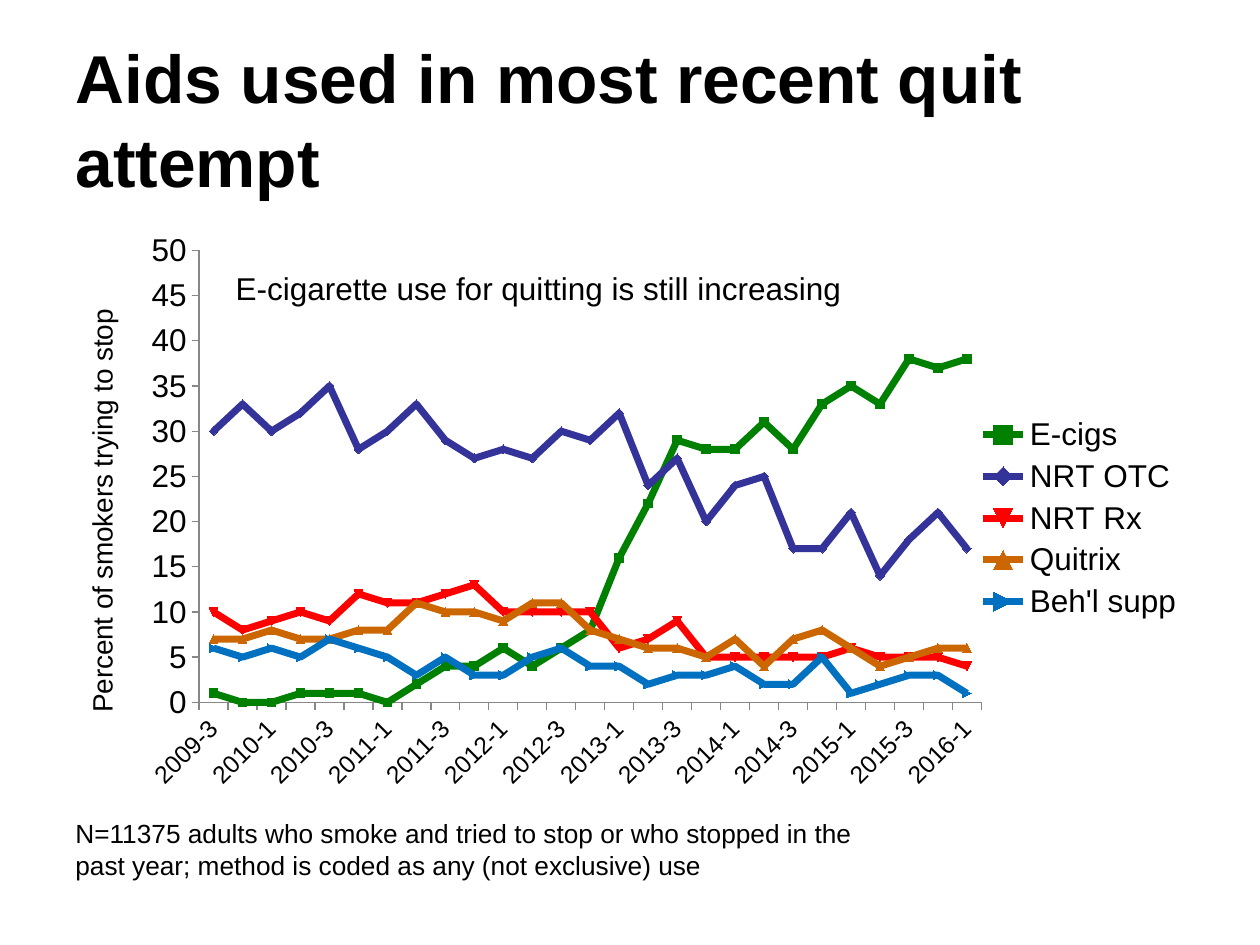
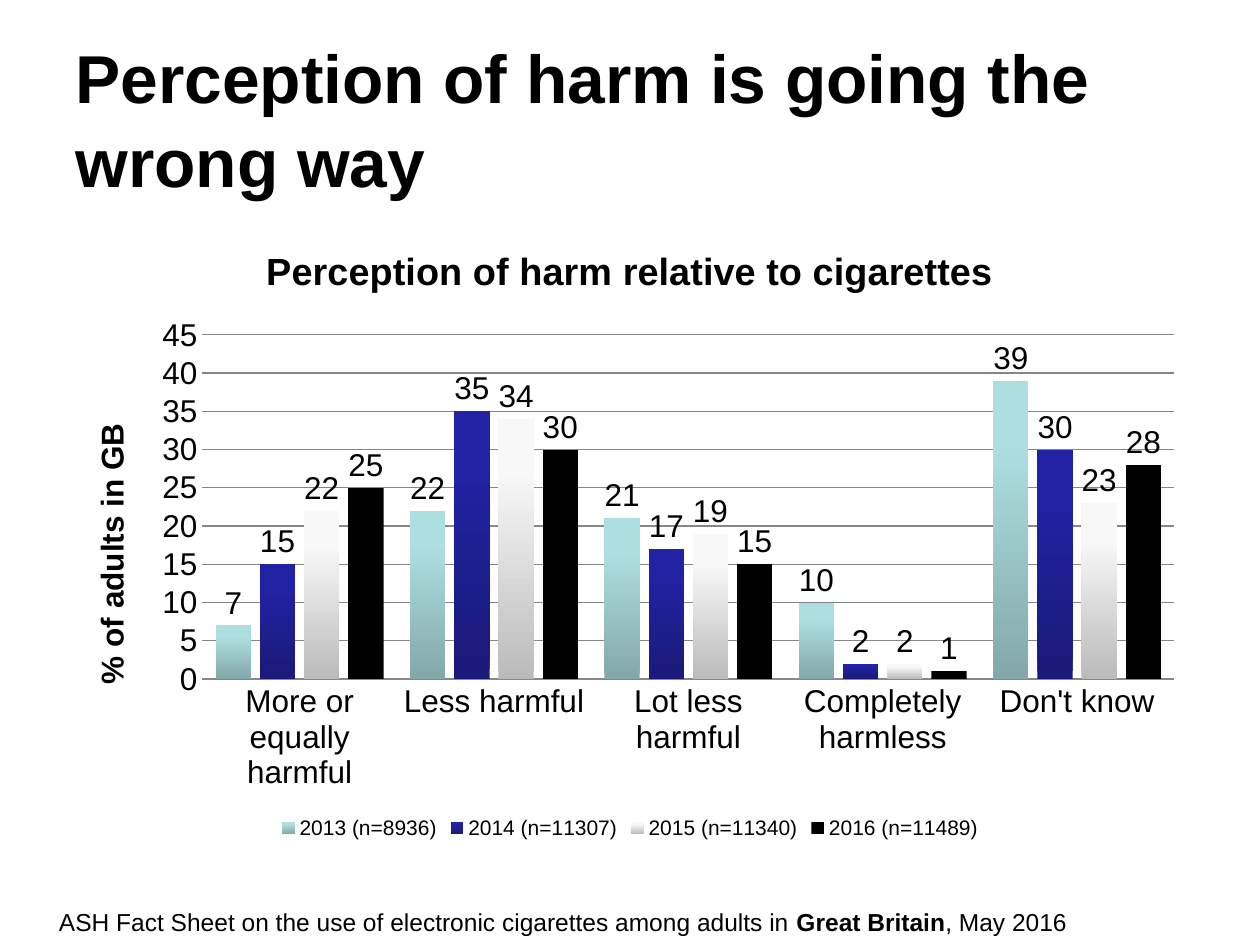
from collections import namedtuple
from dataclasses import dataclass

from lxml import etree
from pptx import Presentation
from pptx.chart.data import CategoryChartData
from pptx.dml.color import RGBColor
from pptx.enum.chart import XL_CHART_TYPE, XL_LABEL_POSITION, XL_LEGEND_POSITION, XL_TICK_MARK
from pptx.enum.text import MSO_ANCHOR, MSO_AUTO_SIZE, PP_ALIGN
from pptx.oxml.ns import qn
from pptx.util import Cm, Pt

LINE = XL_CHART_TYPE.LINE
COLUMN = XL_CHART_TYPE.COLUMN_CLUSTERED
LEGEND_RIGHT = XL_LEGEND_POSITION.RIGHT
LEGEND_BOTTOM = XL_LEGEND_POSITION.BOTTOM
OUTSIDE_END = XL_LABEL_POSITION.OUTSIDE_END
TICK_OUT = XL_TICK_MARK.OUTSIDE
TICK_NONE = XL_TICK_MARK.NONE
TITLE_ONLY = 5

# Left, top, width and height in centimetres
Box = namedtuple("Box", "left top width height")


@dataclass(frozen=True)
class Theme:
    font: str = "Arial"
    text: str = "000000"
    axis: str = "878787"
    title_size: float = 38.7
    chart_title_size: float = 21.6
    chart_size: float = 18
    axis_title_size: float = 16
    note_size: float = 15
    small_size: float = 14
    legend_size: float = 12
    line_width: float = 4


THEME = Theme()
TITLE_BOX = Box(1.27, 0.76, 22.86, 3.18)

# Quit aids: share of smokers trying to stop, by quarter
QUARTERS = [f"{year}-{quarter}" for year in range(2009, 2017) for quarter in range(1, 5)][2:29]
AIDS = [
    ("E-cigs", "008000", [1, 0, 0, 1, 1, 1, 0, 2, 4, 4, 6, 4, 6, 8, 16, 22, 29, 28, 28, 31,
                          28, 33, 35, 33, 38, 37, 38]),
    ("NRT OTC", "333399", [30, 33, 30, 32, 35, 28, 30, 33, 29, 27, 28, 27, 30, 29, 32, 24, 27,
                           20, 24, 25, 17, 17, 21, 14, 18, 21, 17]),
    ("NRT Rx", "FF0000", [10, 8, 9, 10, 9, 12, 11, 11, 12, 13, 10, 10, 10, 10, 6, 7, 9, 5, 5,
                          5, 5, 5, 6, 5, 5, 5, 4]),
    ("Quitrix", "CC6600", [7, 7, 8, 7, 7, 8, 8, 11, 10, 10, 9, 11, 11, 8, 7, 6, 6, 5, 7, 4,
                           7, 8, 6, 4, 5, 6, 6]),
    ("Beh'l supp", "0070C0", [6, 5, 6, 5, 7, 6, 5, 3, 5, 3, 3, 5, 6, 4, 4, 2, 3, 3, 4, 2, 2,
                              5, 1, 2, 3, 3, 1]),
]

# Harm perception: each survey year has a (bottom, top) bar gradient
OPINIONS = ["More or equally harmful", "Less harmful", "Lot less harmful",
            "Completely harmless", "Don't know"]
SURVEYS = [
    ("2013 (n=8936)", ("84A8A9", "AEDFE0"), [7, 22, 21, 10, 39]),
    ("2014 (n=11307)", ("1A1A78", "2222A4"), [15, 35, 17, 2, 30]),
    ("2015 (n=11340)", ("BBBBBB", "F8F8F8"), [22, 34, 19, 2, 23]),
    ("2016 (n=11489)", ("000000", "000000"), [25, 30, 15, 1, 28]),
]


def lengths(box):
    return [Cm(value) for value in box]


def style_font(font, size, bold=False):
    font.name = THEME.font
    font.size = Pt(size)
    font.bold = bold
    font.color.rgb = RGBColor.from_string(THEME.text)


def add_page(deck, title):
    page = deck.slides.add_slide(deck.slide_layouts[TITLE_ONLY])
    heading = page.shapes.title
    heading.left, heading.top, heading.width, heading.height = lengths(TITLE_BOX)
    frame = heading.text_frame
    frame.text = title
    frame.auto_size = MSO_AUTO_SIZE.NONE
    frame.vertical_anchor = MSO_ANCHOR.MIDDLE
    para = frame.paragraphs[0]
    para.alignment = PP_ALIGN.LEFT
    para.line_spacing = 1.04
    style_font(para.runs[0].font, THEME.title_size, bold=True)
    return page


def add_note(page, box, size, *spans):
    """Add one paragraph; each span is a (text, bold) pair."""
    frame = page.shapes.add_textbox(*lengths(box)).text_frame
    frame.word_wrap = True
    for text, bold in spans:
        span = frame.paragraphs[0].add_run()
        span.text = text
        style_font(span.font, size, bold)


def add_chart(page, box, kind, categories, rows, legend_position):
    data = CategoryChartData()
    data.categories = categories
    for name, _, values in rows:
        data.add_series(name, values)
    chart = page.shapes.add_chart(kind, *lengths(box), data).chart
    style_font(chart.font, THEME.chart_size)
    chart.has_title = False
    chart.has_legend = True
    chart.legend.position = legend_position
    chart.legend.include_in_layout = False
    chart.plots[0].vary_by_categories = False
    for axis in (chart.category_axis, chart.value_axis):
        axis.format.line.color.rgb = RGBColor.from_string(THEME.axis)
        axis.format.line.width = Pt(0.75)
    return chart


def set_title(owner, text, size, bold):
    frame = (owner.chart_title if hasattr(owner, "chart_title") else owner.axis_title).text_frame
    frame.text = text
    style_font(frame.paragraphs[0].runs[0].font, size, bold)


def style_axes(chart, tick, maximum, gridlines):
    for axis in (chart.category_axis, chart.value_axis):
        axis.major_tick_mark = tick
        axis.minor_tick_mark = TICK_NONE
    value_axis = chart.value_axis
    value_axis.minimum_scale = 0
    value_axis.maximum_scale = maximum
    value_axis.major_unit = 5
    value_axis.has_major_gridlines = gridlines


def place_plot(chart, left, top, width, height):
    """Fix the inner plot area as fractions of the chart."""
    plot_area = chart.plots[0]._element.getparent()
    for old_layout in plot_area.findall(qn("c:layout")):
        plot_area.remove(old_layout)
    layout = etree.Element(qn("c:layout"))
    manual = etree.SubElement(layout, qn("c:manualLayout"))
    settings = {"layoutTarget": "inner", "xMode": "edge", "yMode": "edge",
                "x": left, "y": top, "w": width, "h": height}
    for tag, value in settings.items():
        etree.SubElement(manual, qn(f"c:{tag}")).set("val", str(value))
    plot_area.insert(0, layout)


def slant_quarter_labels(axis):
    """Turn the labels by 45 degrees and show every second one."""
    style_font(axis.tick_labels.font, THEME.small_size)
    element = axis._element
    body = element.find(f"{qn('c:txPr')}/{qn('a:bodyPr')}")
    body.set("rot", "-2700000")
    body.set("vert", "horz")
    skip = etree.Element(qn("c:tickLblSkip"))
    skip.set("val", "2")
    element.find(qn("c:noMultiLvlLbl")).addprevious(skip)


def add_aids_chart(page, box):
    chart = add_chart(page, box, LINE, QUARTERS, AIDS, LEGEND_RIGHT)
    style_axes(chart, TICK_OUT, 50, gridlines=False)
    set_title(chart.value_axis, "Percent of smokers trying to stop", THEME.axis_title_size, False)
    slant_quarter_labels(chart.category_axis)
    place_plot(chart, 0.12, 0.05, 0.69, 0.76)
    for series, (_, color, _) in zip(chart.plots[0].series, AIDS):
        series.smooth = False
        series.marker.style = None
        series.format.line.color.rgb = RGBColor.from_string(color)
        series.format.line.width = Pt(THEME.line_width)
    # Message over the plot
    message_box = Box(box.left + 3.23, box.top + 0.84, 15.93, 1.02)
    add_note(page, message_box, THEME.chart_size,
             ("E-cigarette use for quitting is still increasing", False))


def add_harm_chart(page, box):
    chart = add_chart(page, box, COLUMN, OPINIONS, SURVEYS, LEGEND_BOTTOM)
    set_title(chart, "Perception of harm relative to cigarettes", THEME.chart_title_size, True)
    style_axes(chart, TICK_NONE, 45, gridlines=True)
    value_axis = chart.value_axis
    set_title(value_axis, "% of adults in GB", THEME.chart_size, True)
    value_axis.format.line.fill.background()
    value_axis.major_gridlines.format.line.color.rgb = RGBColor.from_string(THEME.axis)
    style_font(chart.legend.font, THEME.legend_size)

    plot = chart.plots[0]
    plot.gap_width = 75
    plot.overlap = -25
    plot.has_data_labels = True
    plot.data_labels.show_value = True
    plot.data_labels.position = OUTSIDE_END
    style_font(plot.data_labels.font, THEME.chart_size)

    # Bars shade from dark at the foot to light near the top
    for series, (_, shades, _) in zip(plot.series, SURVEYS):
        series.invert_if_negative = False
        fill = series.format.fill
        fill.gradient()
        fill.gradient_angle = 90
        for stop, shade, position in zip(fill.gradient_stops, shades, (0, 0.8)):
            stop.color.rgb = RGBColor.from_string(shade)
            stop.position = position


def build_aids_page(deck):
    page = add_page(deck, "Aids used in most recent quit attempt")
    add_aids_chart(page, Box(1.27, 4.45, 22.86, 11.99))
    add_note(page, Box(1.27, 16.36, 16.51, 1.55), THEME.note_size,
             ("N=11375 adults who smoke and tried to stop or who stopped in the past year; "
              "method is coded as any (not exclusive) use", False))


def build_harm_page(deck):
    page = add_page(deck, "Perception of harm is going the wrong way")
    add_harm_chart(page, Box(1.27, 4.45, 22.86, 12.57))
    add_note(page, Box(0.94, 18.16, 21.6, 0.86), THEME.small_size,
             ("ASH Fact Sheet on the use of electronic cigarettes among adults in ", False),
             ("Great Britain", True),
             (", May 2016", False))


def main():
    deck = Presentation()
    deck.slide_width, deck.slide_height = Cm(25.4), Cm(19.05)
    build_aids_page(deck)
    build_harm_page(deck)
    deck.save("out.pptx")


if __name__ == "__main__":
    main()
